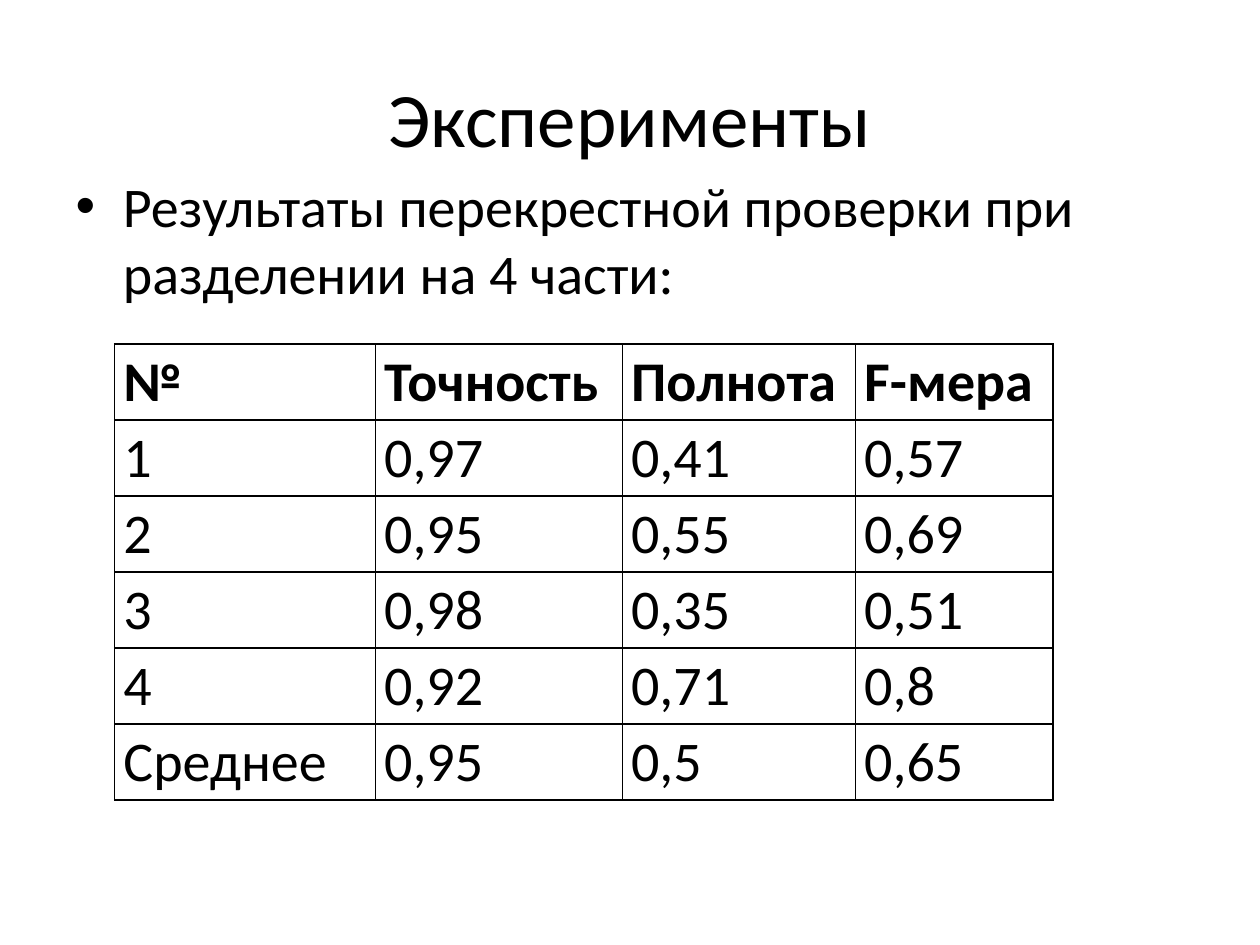
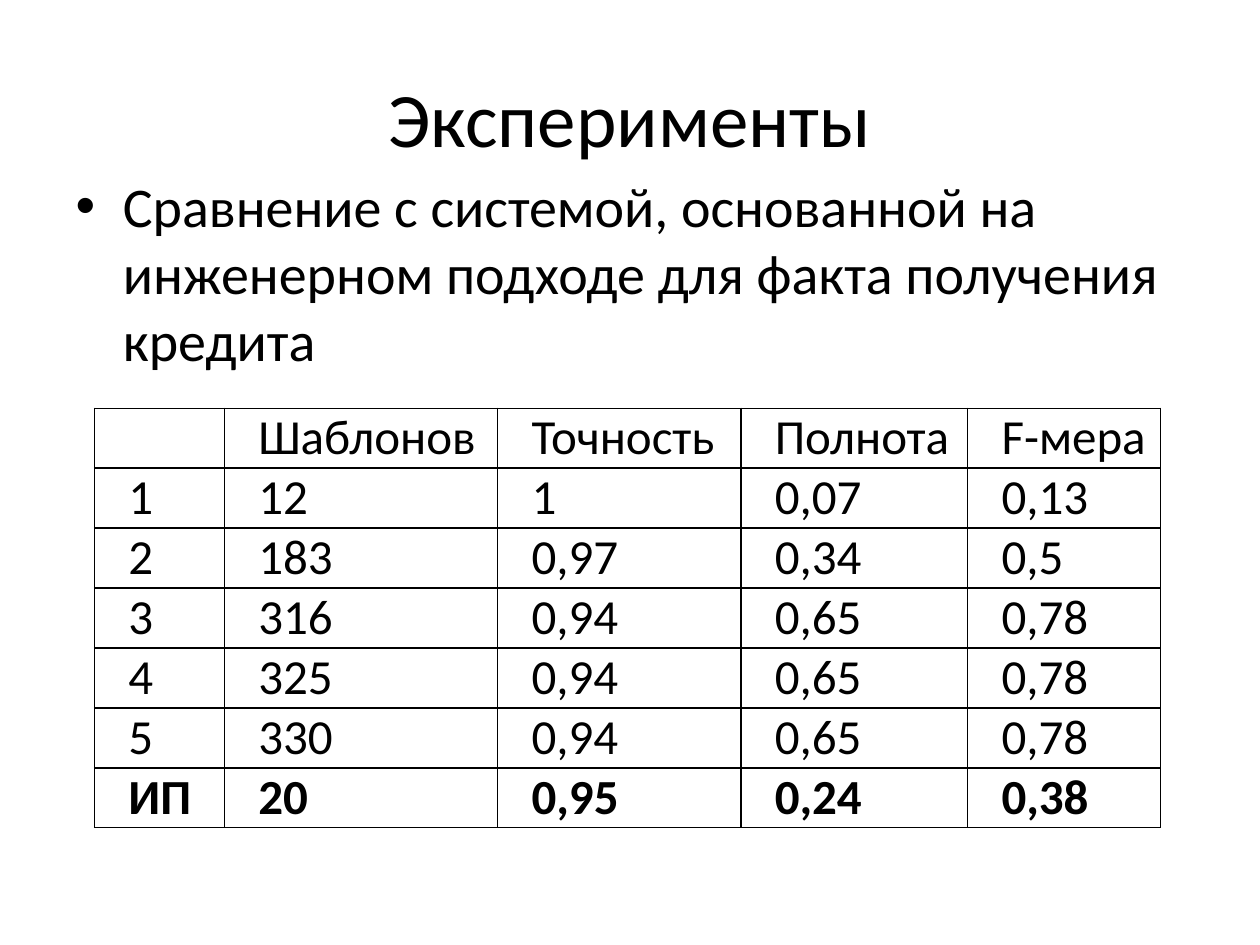
"""Build two slides with tables of experiment results."""
from lxml import etree
from pptx import Presentation
from pptx.dml.color import RGBColor
from pptx.enum.text import MSO_ANCHOR, PP_ALIGN
from pptx.oxml.ns import qn
from pptx.util import Inches, Pt

MIDDLE = MSO_ANCHOR.MIDDLE
CENTER = PP_ALIGN.CENTER
COLORS = {"text": "000000", "line": "000000", "back": "FFFFFF"}
FONT = "Calibri"
TITLE = "Эксперименты"

CROSS = [
    ["№", "Точность", "Полнота", "F-мера"],
    ["1", "0,97", "0,41", "0,57"],
    ["2", "0,95", "0,55", "0,69"],
    ["3", "0,98", "0,35", "0,51"],
    ["4", "0,92", "0,71", "0,8"],
    ["Среднее", "0,95", "0,5", "0,65"],
]
RIVAL = [
    ["", "Шаблонов", "Точность", "Полнота", "F-мера"],
    ["1", "12", "1", "0,07", "0,13"],
    ["2", "183", "0,97", "0,34", "0,5"],
    ["3", "316", "0,94", "0,65", "0,78"],
    ["4", "325", "0,94", "0,65", "0,78"],
    ["5", "330", "0,94", "0,65", "0,78"],
    ["ИП", "20", "0,95", "0,24", "0,38"],
]


def style(para, size, bold=False):
    for run in para.runs:
        run.font.name = FONT
        run.font.size = Pt(size)
        run.font.bold = bold
        run.font.color.rgb = RGBColor.from_string(COLORS["text"])


def place(shape, left, top, width, height):
    shape.left, shape.top = Inches(left), Inches(top)
    shape.width, shape.height = Inches(width), Inches(height)


def add_page(prs, text):
    page = prs.slides.add_slide(prs.slide_layouts[1])
    page.background.fill.solid()
    page.background.fill.fore_color.rgb = RGBColor.from_string(COLORS["back"])
    title, body = page.shapes.title, page.placeholders[1]
    place(title, 0.5, 0.3, 9, 1.25)
    title.text_frame.text = TITLE
    title.text_frame.vertical_anchor = MIDDLE
    title.text_frame.paragraphs[0].alignment = CENTER
    style(title.text_frame.paragraphs[0], 44)
    place(body, 0.5, 1.31, 9, 4.95)
    body.text_frame.text = text
    style(body.text_frame.paragraphs[0], 32)
    return page


def add_border(cell):
    props = cell._tc.get_or_add_tcPr()
    for side in ("lnL", "lnR", "lnT", "lnB"):
        line = etree.SubElement(props, qn(f"a:{side}"), w=str(Pt(1)))
        fill = etree.SubElement(line, qn("a:solidFill"))
        etree.SubElement(fill, qn("a:srgbClr"), val=COLORS["line"])


def fill_cell(cell, text, size, bold, indent, after):
    add_border(cell)
    cell.fill.background()
    cell.vertical_anchor = MIDDLE
    cell.margin_left = cell.margin_right = Inches(0.07)
    cell.margin_top = cell.margin_bottom = 0
    cell.text_frame.text = text
    para = cell.text_frame.paragraphs[0]
    para.space_after = Pt(after)
    para._p.get_or_add_pPr().set("indent", str(Inches(indent)))
    style(para, size, bold)


def add_grid(page, data, left, top, widths, height, size, strong,
             indent=0, after=0):
    frame = page.shapes.add_table(
        len(data), len(widths), Inches(left), Inches(top),
        Inches(sum(widths)), Inches(height))
    table = frame.table
    table.first_row = table.horz_banding = False
    for col, width in zip(table.columns, widths):
        col.width = Inches(width)
    for i, row in enumerate(data):
        for j, text in enumerate(row):
            fill_cell(table.cell(i, j), text, size, i == strong, indent, after)


def main():
    prs = Presentation()
    prs.slide_width, prs.slide_height = Inches(10), Inches(7.5)

    page = add_page(
        prs, "Результаты перекрестной проверки при разделении на 4 части:")
    add_grid(page, CROSS, 0.91, 2.73, [2.07, 1.96, 1.85, 1.57], 3.62,
             size=32, strong=0)

    page = add_page(
        prs, "Сравнение с системой, основанной на инженерном подходе "
             "для факта получения кредита")
    add_grid(page, RIVAL, 0.75, 3.24, [1.03, 2.17, 1.93, 1.8, 1.53], 3.33,
             size=28, strong=len(RIVAL) - 1, indent=0.2, after=3)

    prs.save("out.pptx")


if __name__ == "__main__":
    main()
